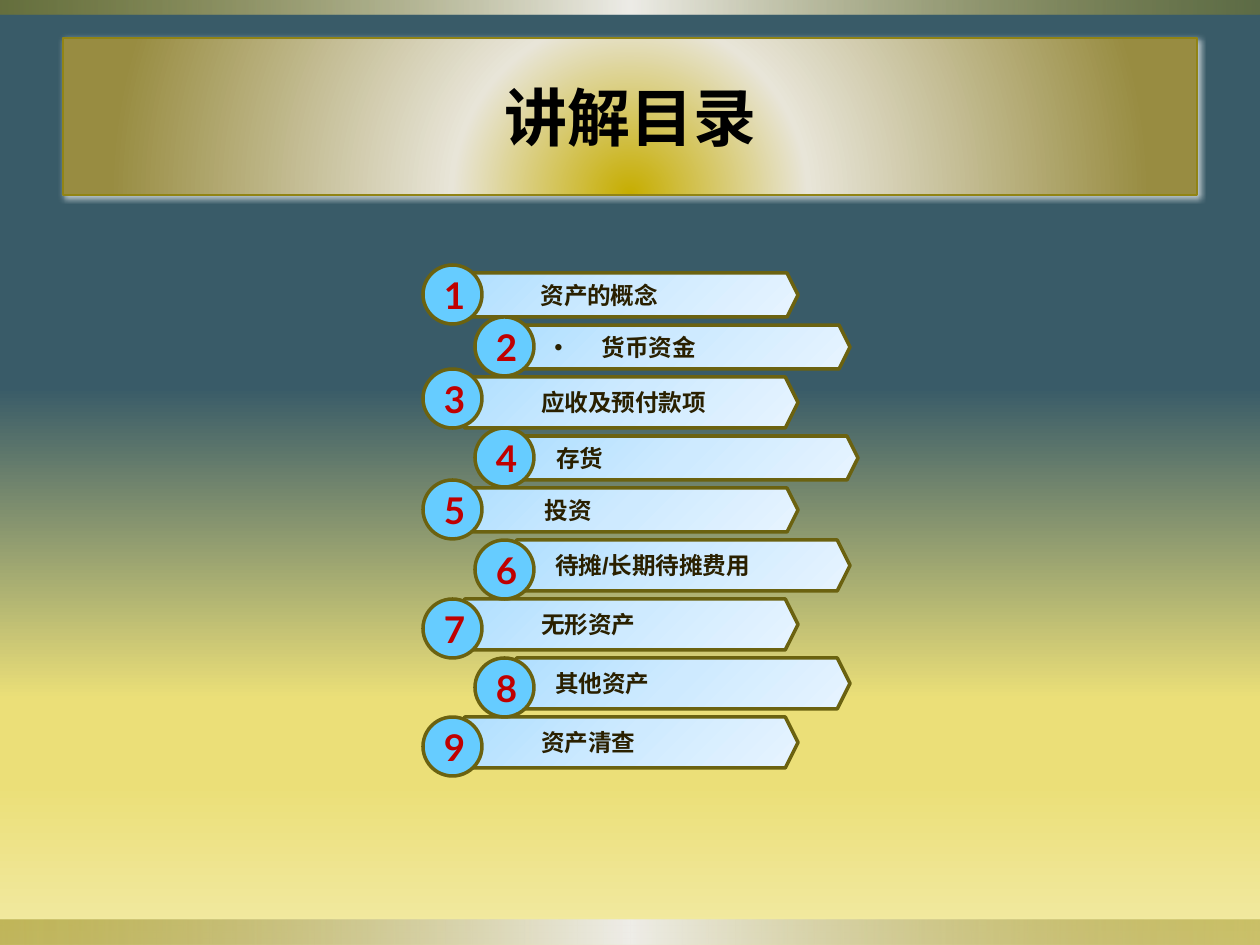
import pptx
import pptx.util
import pptx.dml.color
import pptx.enum.shapes
import pptx.enum.text
import pptx.oxml.ns
from lxml import etree

EMU_PER_PX = 914400 / 126
COLORS = {
    "teal": "395B68", "yellow": "EBDF78", "cream": "F2EAA5",
    "olive": "918415", "pearl": "EEEDE8", "sand": "DCD9CC",
    "gold": "C6AD00", "ivory": "E8E5D8", "khaki": "988C41",
    "sky": "AFDFFF", "pale": "CEEAFF", "ice": "E7F4FF",
    "border": "6B6210", "badge": "66CCFF", "number": "C00000",
    "topic": "2A2000", "title": "000000", "halo": "FFFFFF",
}
BAR_STOPS = [(0, "olive", 50), (50, "pearl", 100), (100, "olive", 40)]
RULE_STOPS = [(0, "sand", 20), (50, "olive", 40), (100, "sand", 50)]
TITLE_STOPS = [(0, "gold", 100), (31, "ivory", 100), (91, "khaki", 100)]
TOPIC_STOPS = [(0, "sky", 100), (50, "pale", 100), (100, "ice", 100)]
PAGE_STOPS = [(0, "teal", 100), (41, "teal", 100), (74, "yellow", 100),
              (83, "yellow", 100), (100, "cream", 100)]

TOPICS = [
    ("资产的概念", 44, 0, 56),
    ("货币资金", 44, 0, 18),
    ("应收及预付款项", 51, 0, 56),
    ("存货", 44, 8, 12),
    ("投资", 44, 0, 60),
    ("待摊/长期待摊费用", 51, 0, 18),
    ("无形资产", 51, 0, 56),
    ("其他资产", 51, 0, 18),
    ("资产清查", 51, 0, 56),
]
FIRST_TOP, GAP, STAGGER = 273, 8, 52
TOPIC_LEFT, TOPIC_WIDTH = 452, 346
BADGE_LEFT, BADGE_SIZE, BADGE_RISE, RAISED_BADGES = 423, 59, 8, 5
SHAPES = pptx.enum.shapes.MSO_SHAPE
ALIGN = pptx.enum.text.PP_ALIGN


def px(length):
    return round(length * EMU_PER_PX)


def rgb(color):
    return pptx.dml.color.RGBColor.from_string(COLORS[color])


def add_xml(parent, tag, **attributes):
    values = {key: str(value) for key, value in attributes.items()}
    return etree.SubElement(parent, pptx.oxml.ns.qn(tag), values)


def add_color(parent, color, alpha):
    node = add_xml(parent, "a:srgbClr", val=COLORS[color])
    if alpha < 100:
        add_xml(node, "a:alpha", val=alpha * 1000)


def fill_gradient(fill, owner, stops, angle=0, focus=None):
    fill.gradient()
    gradient = next(owner.iter(pptx.oxml.ns.qn("a:gradFill")))
    for child in list(gradient):
        gradient.remove(child)
    stop_list = add_xml(gradient, "a:gsLst")
    for position, color, alpha in stops:
        add_color(add_xml(stop_list, "a:gs", pos=position * 1000), color, alpha)
    if focus:
        circle = add_xml(gradient, "a:path", path="circle")
        sides = {side: value * 1000 for side, value in zip("ltrb", focus)}
        add_xml(circle, "a:fillToRect", **sides)
    else:
        add_xml(gradient, "a:lin", ang=angle * 60000, scaled=0)


def place(shape, left, top, width, height):
    shape.left, shape.top = px(left), px(top)
    shape.width, shape.height = px(width), px(height)


def outline(shape, color, width):
    shape.line.color.rgb = rgb(color)
    shape.line.width = pptx.util.Pt(width)


def write(shape, text, font, size, color, align, inset=0):
    frame = shape.text_frame
    frame.text = text
    frame.word_wrap = True
    frame.auto_size = pptx.enum.text.MSO_AUTO_SIZE.NONE
    frame.vertical_anchor = pptx.enum.text.MSO_ANCHOR.MIDDLE
    frame.margin_left = px(inset)
    frame.margin_right = frame.margin_top = frame.margin_bottom = 0
    paragraph = frame.paragraphs[0]
    paragraph.alignment = align
    paragraph.space_before = pptx.util.Pt(0)
    run_font = paragraph.runs[0].font
    run_font.name, run_font.bold = font, True
    run_font.size = pptx.util.Pt(size)
    run_font.color.rgb = rgb(color)


def add_band(slide, left, top, width, height, stops):
    band = slide.shapes.add_shape(SHAPES.RECTANGLE, px(left), px(top), px(width), px(height))
    band.shadow.inherit = False
    fill_gradient(band.fill, band._element, stops)
    band.line.fill.background()
    slide.shapes._spTree.insert(2, band._element)


def format_title(title):
    place(title, 63, 38, 1134, 157)
    fill_gradient(title.fill, title._element, TITLE_STOPS, focus=(50, 150, 50, 0))
    outline(title, "olive", 1)
    title.shadow.inherit = False
    effects = title._element.spPr.find(pptx.oxml.ns.qn("a:effectLst"))
    halo = add_xml(effects, "a:outerShdw", blurRad=px(6), dist=px(2),
                   dir=45 * 60000, rotWithShape=0)
    add_color(halo, "halo", 70)
    write(title, "讲解目录", "Lato", 36, "title", ALIGN.CENTER)


def shape_body(body):
    geometry = add_xml(body._element.spPr, "a:prstGeom", prst="hexagon")
    add_xml(geometry, "a:avLst")
    properties = body.text_frame.paragraphs[0]._p.get_or_add_pPr()
    properties.set("marL", "0")
    properties.set("indent", "0")
    add_xml(properties, "a:buNone")


def format_topic(topic, left, top, height, text, inset):
    place(topic, left, top, TOPIC_WIDTH, height)
    fill_gradient(topic.fill, topic._element, TOPIC_STOPS, angle=45)
    outline(topic, "border", 2)
    topic.shadow.inherit = False
    write(topic, text, "Arial", 13.5, "topic", ALIGN.LEFT, inset)


def add_badge(slide, number, left, top):
    badge = slide.shapes.add_shape(SHAPES.OVAL, px(left), px(top), px(BADGE_SIZE), px(BADGE_SIZE))
    badge.shadow.inherit = False
    badge.fill.solid()
    badge.fill.fore_color.rgb = rgb("badge")
    outline(badge, "border", 2)
    write(badge, str(number), "Lato", 21, "number", ALIGN.CENTER, 4)


def add_topics(slide, body):
    top = FIRST_TOP
    badges = []
    for index, (text, height, nudge, inset) in enumerate(TOPICS):
        shift = index % 2 * STAGGER
        if index == 1:
            topic = body
            place(topic, TOPIC_LEFT + shift, top, TOPIC_WIDTH, height)
            shape_body(topic)
        else:
            topic = slide.shapes.add_shape(SHAPES.HEXAGON, 0, 0, 0, 0)
        format_topic(topic, TOPIC_LEFT + shift + nudge, top, height, text, inset)
        rise = BADGE_RISE if index < RAISED_BADGES else 0
        badges.append((index + 1, BADGE_LEFT + shift, top - rise))
        top += height + GAP
    for badge in badges:
        add_badge(slide, *badge)


def main():
    presentation = pptx.Presentation()
    presentation.slide_width, presentation.slide_height = px(1260), px(945)
    slide = presentation.slides.add_slide(presentation.slide_layouts[1])
    fill_gradient(slide.background.fill, slide._element, PAGE_STOPS, angle=90)
    add_band(slide, 0, 920, 1260, 25, BAR_STOPS)
    add_band(slide, 0, 0, 1260, 15, BAR_STOPS)
    add_band(slide, 63, 194, 1134, 2, RULE_STOPS)
    format_title(slide.shapes.title)
    add_topics(slide, slide.placeholders[1])
    presentation.save("out.pptx")


if __name__ == "__main__":
    main()
